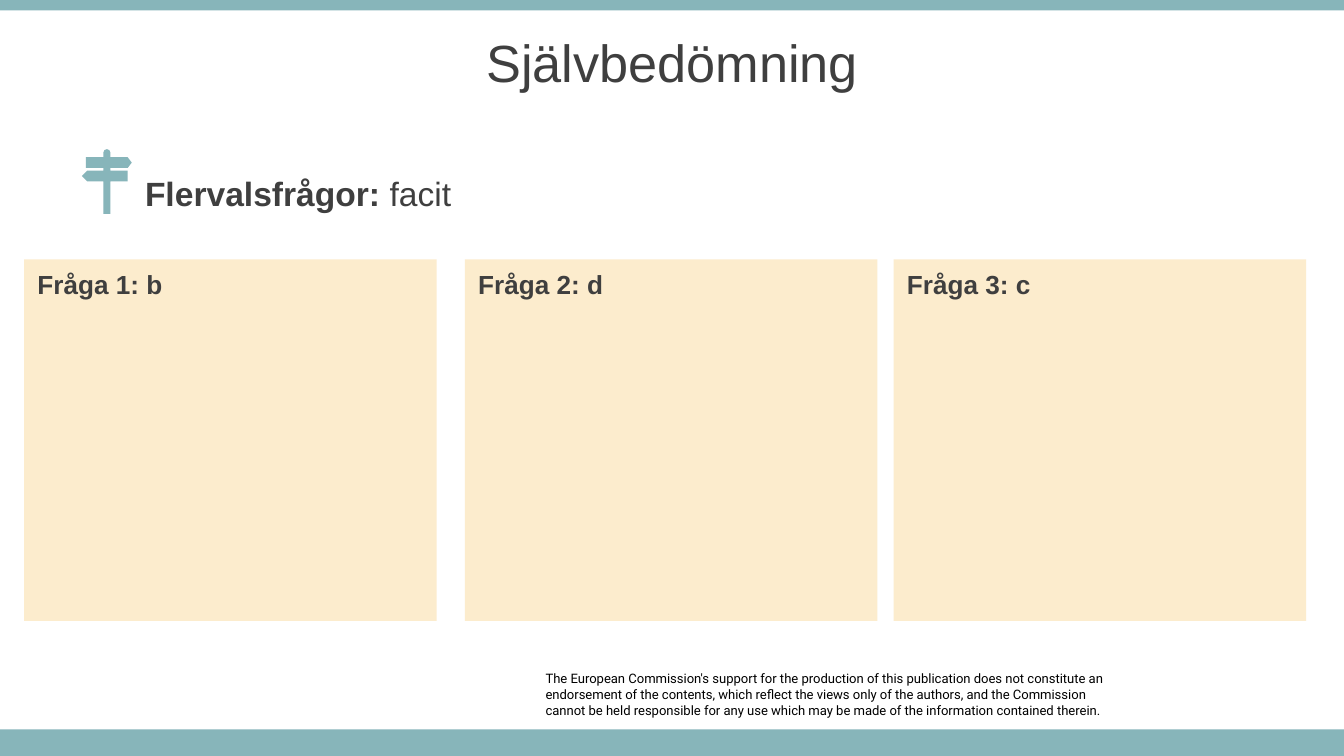
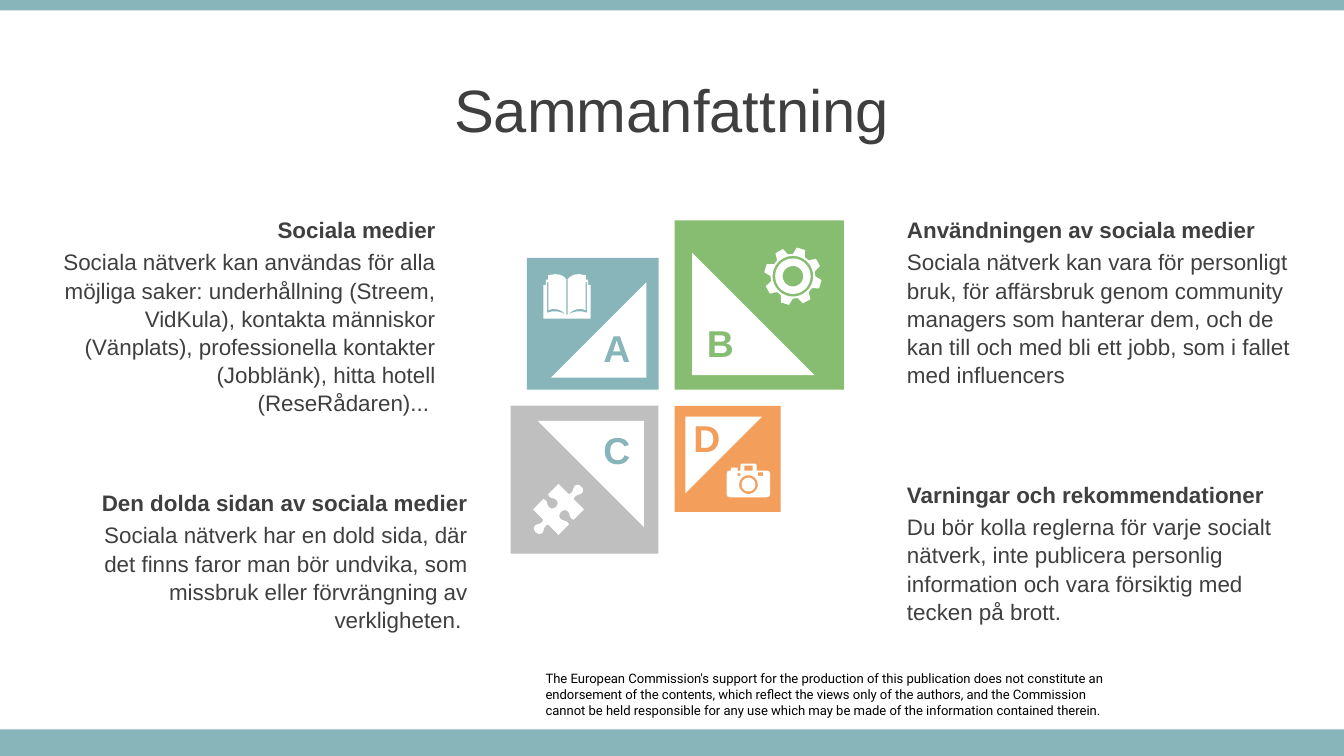
from dataclasses import dataclass
from math import cos, radians, sin

from lxml import etree
from pptx import Presentation
from pptx.dml.color import RGBColor
from pptx.enum.shapes import MSO_SHAPE
from pptx.enum.text import MSO_ANCHOR, MSO_AUTO_SIZE, PP_ALIGN
from pptx.util import Pt

RECTANGLE, TRIANGLE = MSO_SHAPE.RECTANGLE, MSO_SHAPE.RIGHT_TRIANGLE
LEFT, CENTER, RIGHT = PP_ALIGN.LEFT, PP_ALIGN.CENTER, PP_ALIGN.RIGHT
TOP, MIDDLE = MSO_ANCHOR.TOP, MSO_ANCHOR.MIDDLE
FIXED_SIZE = MSO_AUTO_SIZE.NONE

Point = tuple[float, float]
Contour = list[Point]
Box = tuple[float, float, float, float]
Run = tuple[str, bool]


@dataclass(frozen=True)
class Theme:
    teal: str = "87B5BA"
    green: str = "86BD70"
    orange: str = "F39E5A"
    grey: str = "BFBFBF"
    cream: str = "FCECCD"
    white: str = "FFFFFF"
    black: str = "000000"
    ink: str = "3F3F3F"
    font: str = "Arial"
    footer_font: str = "Roboto"
    answers_title: float = 28
    summary_title: float = 32
    letter: float = 20
    subtitle: float = 18
    panel: float = 14
    body: float = 12
    footer: float = 7


@dataclass(frozen=True)
class TextStyle:
    size: float
    color: str
    align: PP_ALIGN = LEFT
    anchor: MSO_ANCHOR = TOP
    font: str = "Arial"
    margins: Box = (7.2, 3.6, 7.2, 3.6)
    spacing: float = 1.0


@dataclass(frozen=True)
class Tile:
    letter: str
    column: int  # -1 left of the centre, 1 right of it
    row: int  # -1 above the centre, 1 below it
    size: float
    color: str
    letter_color: str
    letter_at: Point
    corner_at: Point
    corner_size: float
    corner_turn: float


@dataclass(frozen=True)
class Topic:
    left: float
    top: float
    width: float
    height: float
    align: PP_ALIGN
    heading: str
    body: str


THEME = Theme()
WIDTH, HEIGHT = 720, 405
TILE_CENTER, TILE_GAP = (357.1, 213.1), 8.6
LETTER_BOX = 31.7

DISCLAIMER = [
    "The European Commission's support for the production of this publication does not "
    "constitute an endorsement of the contents, which reflect the views only of the authors, "
    "and the Commission",
    "cannot be held responsible for any use which may be made of the information contained "
    "therein.",
]

ANSWERS = [(13, "Fråga 1: b"), (249.1, "Fråga 2: d"), (478.8, "Fråga 3: c")]

TILES = [
    Tile("A", -1, -1, 70.6, THEME.teal, THEME.teal, (314.6, 170.6), (295.2, 151.2), 51.1, 270),
    Tile("B", 1, -1, 90.7, THEME.green, THEME.green, (370.1, 167.8), (370.8, 135.4), 65.5, 0),
    Tile("C", -1, 1, 79.2, THEME.grey, THEME.teal, (314.6, 225.4), (288, 225.4), 56.9, 180),
    Tile("D", 1, 1, 56.9, THEME.orange, THEME.orange, (362.9, 218.9), (367.2, 223.2), 41, 90),
]

TOPICS = [
    Topic(20.2, 111.6, 220.3, 80, RIGHT, "Sociala medier",
          "Sociala nätverk kan användas för alla möjliga saker: underhållning (Streem, "
          "VidKula), kontakta människor (Vänplats), professionella kontakter "
          "(Jobblänk), hitta hotell (ReseRådaren)... "),
    Topic(31.7, 257.8, 226, 65.5, RIGHT, "Den dolda sidan av sociala medier",
          "Sociala nätverk har en dold sida, där det finns faror man bör undvika, som "
          "missbruk eller förvrängning av verkligheten. "),
    Topic(478.8, 111.6, 226.8, 80, LEFT, "Användningen av sociala medier",
          "Sociala nätverk kan vara för personligt bruk, för affärsbruk genom community "
          "managers som hanterar dem, och de kan till och med bli ett jobb, som i fallet "
          "med influencers"),
    Topic(478.8, 253.4, 215.3, 65.5, LEFT, "Varningar och rekommendationer",
          "Du bör kolla reglerna för varje socialt nätverk, inte publicera personlig "
          "information och vara försiktig med tecken på brott."),
]

# Icon outlines; each is a list of contours, inner contours cut holes
SIGNPOST = [[
    (55.4, 81.7), (56, 80.4), (57.3, 79.9), (58.6, 80.4), (59.2, 81.7), (59.2, 84.2),
    (68.4, 84.2), (70.6, 87.1), (68.4, 90), (59.2, 90), (59.2, 91.4), (68.4, 91.4),
    (68.4, 97.2), (59.2, 97.2), (59.2, 114.5), (55.4, 114.5), (55.4, 97.2), (46.8, 97.2),
    (43.9, 94.3), (46.8, 91.4), (55.4, 91.4), (55.4, 90), (46.1, 90), (46.1, 84.2),
    (55.4, 84.2),
]]


def mirrored(half: Contour, x_sign: int, y_sign: int) -> Contour:
    return [(x * x_sign, y * y_sign) for x, y in reversed(half)]


def rectangle(left: float, top: float, right: float, bottom: float) -> Contour:
    return [(left, top), (right, top), (right, bottom), (left, bottom)]


def circle(radius: float) -> Contour:
    return [(radius * cos(radians(a)), radius * sin(radians(a))) for a in range(0, 360, 10)]


def book() -> list[Contour]:
    half = [(0.3, 2.9), (1.2, 1.8), (2.6, 0.8), (4.4, 0.2), (6.6, 0), (10.1, 0.6),
            (10.1, 2.9), (11.3, 2.9), (11.3, 5.8), (12.7, 5.8), (12.7, 23.8)]
    page_gap = [(0.6, 21.7), (2.8, 20.6), (5.5, 19.9), (8, 20), (10.7, 20.7), (10.7, 4.3),
                (10, 4.3), (10, 19.3), (7.5, 18.6), (4.8, 18.9), (2.6, 19.9)]
    spine = rectangle(-0.3, 2.9, 0.3, 21.7)
    return [half + mirrored(half, -1, 1), page_gap, mirrored(page_gap, -1, 1), spine]


def puzzle_piece() -> list[Contour]:
    quarter = [(0, -17.3), (1.4, -17), (2.4, -16.2), (2.8, -15), (2.4, -13.8), (1.6, -12.4),
               (1.4, -11), (1.8, -9.7), (9.7, -9.7), (9.7, -1.8), (8.6, -1.4), (7.2, -1.6),
               (5.8, -2.4), (4.4, -2.8), (3, -2.4), (2.2, -1.4), (1.9, 0)]
    right_half = quarter + mirrored(quarter, 1, -1)
    return [right_half + mirrored(right_half, -1, 1)]


def gear() -> list[Contour]:
    tooth = [(-16, 12), (-8.5, 15.5), (8.5, 15.5), (16, 12)]
    rim = [(r * sin(radians(16.3 + 45 * i + a)), -r * cos(radians(16.3 + 45 * i + a)))
           for i in range(8) for a, r in tooth]
    return [rim, circle(10.9), circle(9.5), circle(5.5)]


def camera() -> list[Contour]:
    body = [(-12.4, -7.5), (-11.6, -7.5), (-11.6, -9), (-8, -9), (-8, -7.5), (-4.3, -7.5),
            (-4.3, -10.5), (-3.6, -11.2), (3.6, -11.2), (4.3, -10.5), (4.3, -7.5),
            (7.4, -7.5), (8.9, -7.1), (9.4, -5.8), (9.4, 5.2), (8.9, 6.4), (7.4, 6.8),
            (-12.4, 6.8), (-13.4, 6.4), (-13.9, 5.2), (-13.9, -5.8), (-13.4, -7.1)]
    body = [(x + 2.2 if abs(x) > 5 else x, y) for x, y in body]
    return [body, circle(5), circle(3.7), rectangle(-5.8, -6.1, -4.3, -4.7),
            rectangle(5, -6.5, 7.9, -4.7), rectangle(-2.2, -10.1, 2.2, -7.5)]


def set_all(target: object, formats: dict) -> None:
    for attribute, value in formats.items():
        setattr(target, attribute, value)


def paint(shape, color: str, turn: float = 0) -> None:
    shape.shadow.inherit = False
    shape.fill.solid()
    shape.fill.fore_color.rgb = RGBColor.from_string(color)
    shape.line.fill.background()
    shape.rotation = turn


def add_block(slide, kind: MSO_SHAPE, box: Box, color: str, turn: float = 0):
    block = slide.shapes.add_shape(kind, *map(Pt, box))
    paint(block, color, turn)
    return block


def add_icon(slide, contours: list[Contour], origin: Point, color: str, turn: float = 0) -> None:
    placed = [[(Pt(origin[0] + x), Pt(origin[1] + y)) for x, y in contour]
              for contour in contours]
    builder = slide.shapes.build_freeform(*placed[0][0])
    builder.add_line_segments(placed[0][1:], close=True)
    for contour in placed[1:]:
        builder.move_to(*contour[0])
        builder.add_line_segments(contour[1:], close=True)
    paint(builder.convert_to_shape(), color, turn)


def write(frame, paragraphs: list[list[Run]], style: TextStyle) -> None:
    left, top, right, bottom = map(Pt, style.margins)
    set_all(frame, {"word_wrap": True, "auto_size": FIXED_SIZE,
                    "vertical_anchor": style.anchor, "margin_left": left,
                    "margin_top": top, "margin_right": right, "margin_bottom": bottom})
    for index, runs in enumerate(paragraphs):
        paragraph = frame.add_paragraph() if index else frame.paragraphs[0]
        set_all(paragraph, {"alignment": style.align, "line_spacing": style.spacing})
        for text, bold in runs:
            run = paragraph.add_run()
            run.text = text
            set_all(run.font, {"name": style.font, "size": Pt(style.size), "bold": bold})
            run.font.color.rgb = RGBColor.from_string(style.color)


def add_text(slide, box: Box, paragraphs: list[list[Run]], style: TextStyle) -> None:
    write(slide.shapes.add_textbox(*map(Pt, box)).text_frame, paragraphs, style)


def add_titled_slide(deck, title: str, top: float, size: float):
    slide = deck.slides.add_slide(deck.slide_layouts[5])
    # Footer text and the two bands
    add_text(slide, (292.3, 359.3, 300.2, 25.2), [[(line, False)] for line in DISCLAIMER],
             TextStyle(THEME.footer, THEME.black, font=THEME.footer_font, margins=(0, 0, 0, 0)))
    add_block(slide, RECTANGLE, (0, 390.8, WIDTH, HEIGHT - 390.8), THEME.teal)
    add_block(slide, RECTANGLE, (0, 0, WIDTH, 5.6), THEME.teal)
    # Title
    heading = slide.shapes.title
    set_all(heading, {"left": 0, "top": Pt(top), "width": Pt(WIDTH), "height": Pt(45.4)})
    write(heading.text_frame, [[(title, False)]],
          TextStyle(size, THEME.ink, CENTER, MIDDLE, THEME.font))
    return slide


def build_answers(deck) -> None:
    slide = add_titled_slide(deck, "Självbedömning", 10.1, THEME.answers_title)
    add_text(slide, (70.6, 92.2, 481.7, 22.3), [[("Flervalsfrågor: ", True), ("facit", False)]],
             TextStyle(THEME.subtitle, THEME.ink, anchor=MIDDLE))
    add_icon(slide, SIGNPOST, (0, 0), THEME.teal)
    # Answer panels
    style = TextStyle(THEME.panel, THEME.ink, margins=(7.2, 5, 7.2, 3.6))
    for left, answer in ANSWERS:
        panel = add_block(slide, RECTANGLE, (left, 139, 221, 193.7), THEME.cream)
        write(panel.text_frame, [[(answer, True)]], style)


def add_tile(slide, tile: Tile) -> None:
    left, top = (middle + side * TILE_GAP / 2 - (tile.size if side < 0 else 0)
                 for middle, side in zip(TILE_CENTER, (tile.column, tile.row)))
    add_block(slide, RECTANGLE, (left, top, tile.size, tile.size), tile.color)
    add_block(slide, TRIANGLE, (*tile.corner_at, tile.corner_size, tile.corner_size),
              THEME.white, tile.corner_turn)
    add_text(slide, (*tile.letter_at, LETTER_BOX, LETTER_BOX), [[(tile.letter, True)]],
             TextStyle(THEME.letter, tile.letter_color, CENTER))


def add_topic(slide, topic: Topic) -> None:
    style = TextStyle(THEME.body, THEME.ink, topic.align, spacing=1.05)
    add_text(slide, (topic.left, topic.top + 17.3, topic.width, topic.height),
             [[(topic.body, False)]], style)
    add_text(slide, (topic.left, topic.top, topic.width, 21.6),
             [[(topic.heading, True)]], style)


def build_summary(deck) -> None:
    slide = add_titled_slide(deck, "Sammanfattning", 35.3, THEME.summary_title)
    for tile in TILES:
        add_tile(slide, tile)
    # Icons on the tiles
    add_icon(slide, book(), (303.8, 146.9), THEME.white)
    add_icon(slide, puzzle_piece(), (299.2, 272.9), THEME.white, 45)
    add_icon(slide, gear(), (424.8, 148), THEME.white)
    add_icon(slide, camera(), (401, 259.6), THEME.white)
    for topic in TOPICS:
        add_topic(slide, topic)


def main() -> None:
    deck = Presentation()
    set_all(deck, {"slide_width": Pt(WIDTH), "slide_height": Pt(HEIGHT)})
    build_answers(deck)
    build_summary(deck)
    deck.save("out.pptx")


if __name__ == "__main__":
    main()
